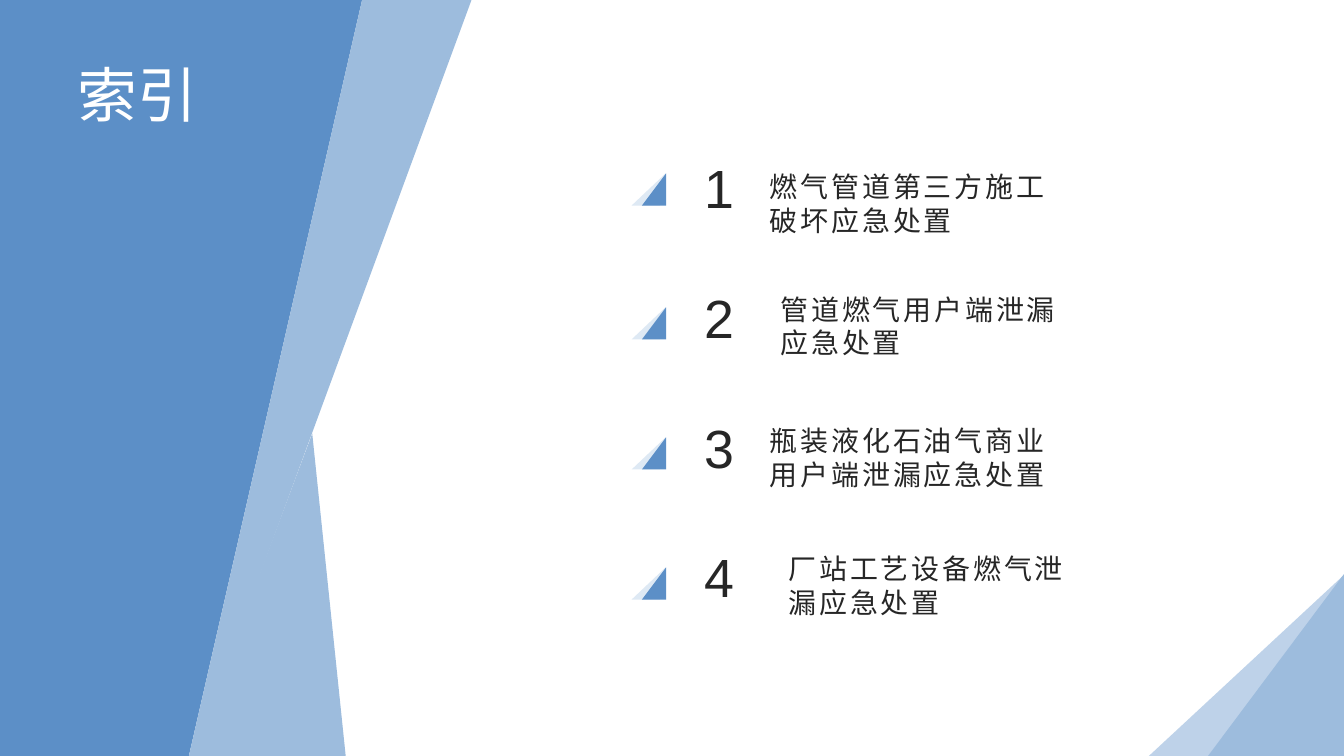
"""Build the index slide for the gas emergency response deck."""
from lxml import etree
from pptx import Presentation
from pptx import util as u
from pptx.dml.color import RGBColor
from pptx.enum import shapes, text
from pptx.oxml.ns import qn

WIDTH, HEIGHT = 720, 405
BLUE, LIGHT_BLUE = "5C8FC7", "9DBCDD"
PALE_BLUE, FAINT_BLUE = "BED2E9", "DEE9F4"
DARK, WHITE = "262626", "FFFFFF"
FONT = "Arial"
NUMBER_TOP, ROW_STEP = 79.2, 69.6

ENTRIES = [
    ("燃气管道第三方施工破坏应急处置", 405.4, 83.5, 92.9),
    ("管道燃气用户端泄漏应急处置", 411.1, 149, 164.6),
    ("瓶装液化石油气商业用户端泄漏应急处置", 405.4, 219.6, 234.3),
    ("厂站工艺设备燃气泄漏应急处置", 415.4, 288, 304),
]


def color(hex_string):
    """Return the colour for a hex string."""
    return RGBColor.from_string(hex_string)


def paint(shape, fill):
    """Give a shape a flat fill without line or shadow."""
    shape.shadow.inherit = False
    shape.fill.solid()
    shape.fill.fore_color.rgb = color(fill)
    shape.line.fill.background()


def add_polygon(slide, points, fill):
    """Draw a closed outline through points given in points."""
    corners = [(u.Pt(x), u.Pt(y)) for x, y in points]
    builder = slide.shapes.build_freeform(*corners[0], scale=1.0)
    builder.add_line_segments(corners[1:], close=True)
    paint(builder.convert_to_shape(), fill)


def add_right_triangle(slide, left, top, width, height, fill):
    """Draw a triangle whose apex stands over its right corner."""
    box = [u.Pt(value) for value in (left, top, width, height)]
    triangle = slide.shapes.add_shape(shapes.MSO_SHAPE.ISOSCELES_TRIANGLE, *box)
    triangle.adjustments[0] = 1
    paint(triangle, fill)


def add_text(slide, content, box, size, fill, anchor=text.MSO_ANCHOR.TOP, spacing=0):
    """Add a wrapped text box with one formatted run."""
    text_box = slide.shapes.add_textbox(*[u.Pt(value) for value in box])
    frame = text_box.text_frame
    frame.text = content
    frame.word_wrap = True
    frame.vertical_anchor = anchor
    run = frame.paragraphs[0].runs[0]
    run.font.name = FONT
    run.font.size = u.Pt(size)
    run.font.color.rgb = color(fill)
    properties = run._r.get_or_add_rPr()
    etree.SubElement(properties, qn("a:ea")).set("typeface", FONT)
    if spacing:
        properties.set("spc", str(round(spacing * 100)))


def add_marker(slide, top):
    """Draw the two-tone triangle in front of an entry."""
    bottom = top + 17.2
    add_polygon(slide, [(356.6, top), (353.5, bottom), (338.4, bottom)], FAINT_BLUE)
    add_right_triangle(slide, 343.9, top, 12.9, 17.2, BLUE)


def add_entry(slide, number, title, left, top, marker_top):
    """Add the number, marker and title of one index entry."""
    number_top = NUMBER_TOP + (number - 1) * ROW_STEP
    add_text(slide, str(number), (370.1, number_top, 31, 49), 28.8, DARK)
    add_marker(slide, marker_top)
    add_text(slide, title, (left, top, 170, 51), 15, DARK,
             text.MSO_ANCHOR.MIDDLE, spacing=1.5)


def add_backdrop(slide):
    """Draw the corner and the slanted panels on the left."""
    add_polygon(slide, [(WIDTH, 308), (700, HEIGHT), (615.5, HEIGHT)], PALE_BLUE)
    add_right_triangle(slide, 647.2, 307.6, 72.8, 97.4, LIGHT_BLUE)
    add_polygon(slide, [(0, 0), (194, 0), (101.2, HEIGHT), (0, HEIGHT)], BLUE)
    add_polygon(slide, [(252.6, 0), (103.5, HEIGHT), (101.2, HEIGHT), (194, 0)],
                LIGHT_BLUE)
    add_polygon(slide, [(167.3, 232.3), (185.2, HEIGHT), (102.6, HEIGHT)], LIGHT_BLUE)


def main():
    """Build and save the slide."""
    presentation = Presentation()
    presentation.slide_width = u.Pt(WIDTH)
    presentation.slide_height = u.Pt(HEIGHT)
    slide = presentation.slides.add_slide(presentation.slide_layouts[6])
    add_backdrop(slide)
    for number, entry in enumerate(ENTRIES, start=1):
        add_entry(slide, number, *entry)
    add_text(slide, "索引", (34.6, 27.4, 82.8, 49), 32, WHITE)
    presentation.save("out.pptx")


if __name__ == "__main__":
    main()
